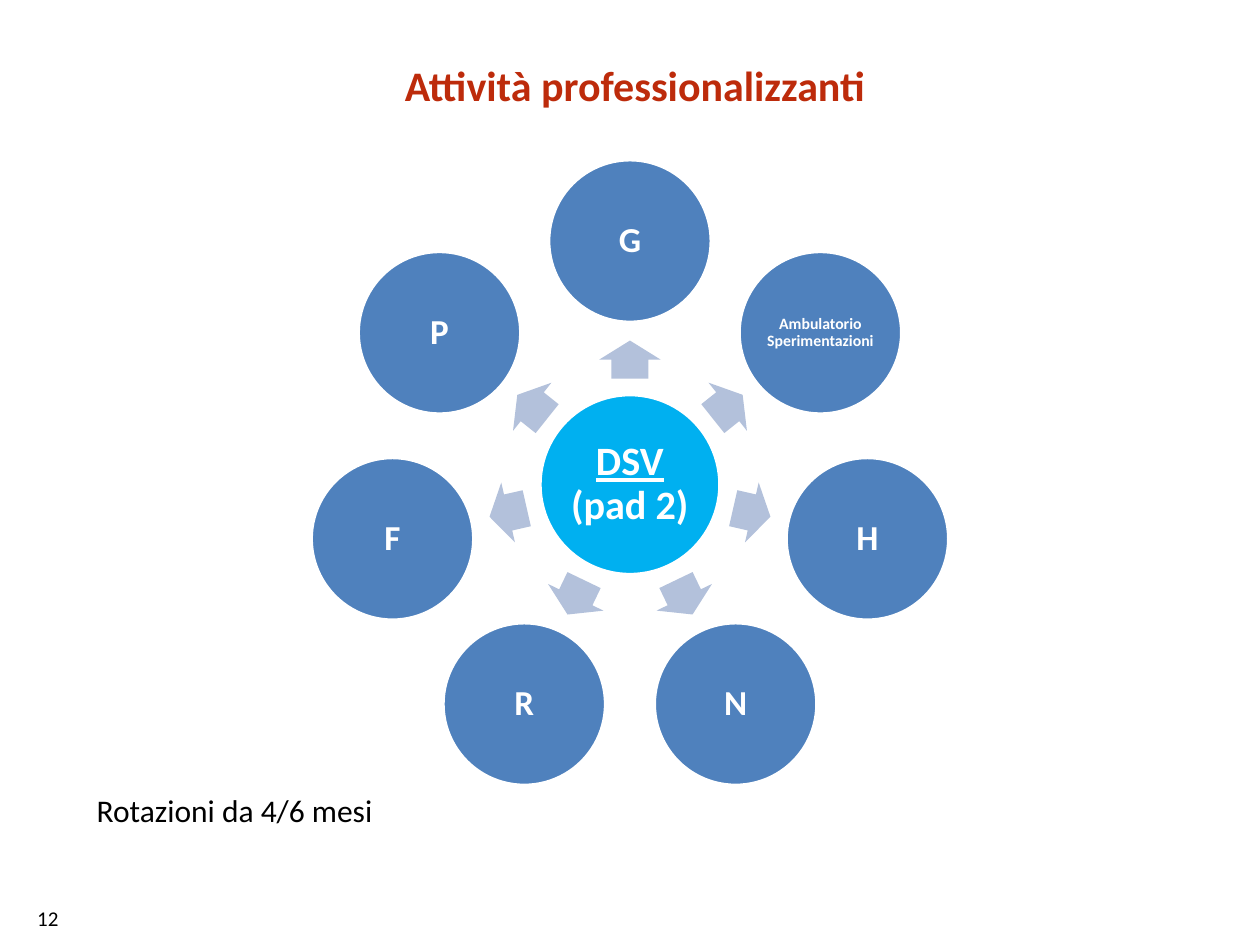
"""Build the slide on professional activities: seven placements around one hub."""
import math

from pptx import Presentation
from pptx.dml.color import RGBColor
from pptx.enum import shapes, text
from pptx.util import Cm, Pt

FONT = "Calibri"
RED = RGBColor(0xBD, 0x2B, 0x0B)
BLACK = RGBColor(0, 0, 0)
WHITE = RGBColor(0xFF, 0xFF, 0xFF)
CYAN = RGBColor(0x00, 0xB0, 0xF0)
BLUE = RGBColor(0x4F, 0x81, 0xBD)
PALE_BLUE = RGBColor(0xB3, 0xC1, 0xDB)

HUB_X, HUB_Y = 12.7, 9.77
HUB_SIZE, PLACEMENT_SIZE = 3.63, 3.28
ARROW_LENGTH, ARROW_HEIGHT = 0.77, 1.24
PLACEMENT_RADIUS, ARROW_RADIUS = 4.91, 2.52
PLACEMENTS = [("G", 20), ("Ambulatorio Sperimentazioni", 9), ("H", 20),
              ("N", 20), ("R", 20), ("F", 20), ("P", 20)]


def set_font(paragraph, size, color, bold=False):
    """Set the font shared by all runs of a paragraph."""
    font = paragraph.font
    font.name, font.size, font.bold = FONT, Pt(size), bold
    font.color.rgb = color


def add_label(slide, left, top, width, height, wording, size, color=BLACK, bold=False):
    """Add a wrapping text box and return its paragraph."""
    frame = slide.shapes.add_textbox(Cm(left), Cm(top), Cm(width), Cm(height)).text_frame
    frame.word_wrap = True
    label = frame.paragraphs[0]
    label.text = wording
    set_font(label, size, color, bold)
    return label


def add_centred(slide, preset, x, y, width, height, fill):
    """Add a filled, shadowless shape centred on a point."""
    figure = slide.shapes.add_shape(
        preset, Cm(x - width / 2), Cm(y - height / 2), Cm(width), Cm(height))
    figure.shadow.inherit = False
    figure.fill.solid()
    figure.fill.fore_color.rgb = fill
    return figure


def add_circle(slide, x, y, diameter, fill, wording, size, inset=0.08):
    """Add a white-rimmed circle with centred bold text and return its paragraph."""
    circle = add_centred(slide, shapes.MSO_SHAPE.OVAL, x, y, diameter, diameter, fill)
    circle.line.color.rgb = WHITE
    circle.line.width = Pt(2)
    frame = circle.text_frame
    frame.word_wrap = True
    frame.vertical_anchor = text.MSO_ANCHOR.MIDDLE
    frame.margin_left = frame.margin_right = Cm(inset)
    frame.margin_top = frame.margin_bottom = Cm(inset)
    caption = frame.paragraphs[0]
    caption.text = wording
    caption.alignment = text.PP_ALIGN.CENTER
    caption.line_spacing = 0.9
    set_font(caption, size, WHITE, bold=True)
    return caption


def add_arrow(slide, x, y, angle):
    """Add an outward arrow turned clockwise by an angle in degrees."""
    arrow = add_centred(slide, shapes.MSO_SHAPE.RIGHT_ARROW, x, y,
                        ARROW_LENGTH, ARROW_HEIGHT, PALE_BLUE)
    arrow.line.fill.background()
    arrow.adjustments[0], arrow.adjustments[1] = 0.6, 0.5
    arrow.rotation = angle % 360


def around_hub(radius, angle):
    """Return the point at a radius and angle from the hub."""
    turn = math.radians(angle)
    return HUB_X + radius * math.cos(turn), HUB_Y + radius * math.sin(turn)


def add_rotation_wheel(slide):
    """Add the hub with its arrows and placements, clockwise from the top."""
    hub = add_circle(slide, HUB_X, HUB_Y, HUB_SIZE, CYAN, "DSV", 23)
    hub.runs[0].font.underline = True
    hub.add_run().text = " (pad 2)"
    for index, (placement, size) in enumerate(PLACEMENTS):
        angle = -90 + index * 360 / len(PLACEMENTS)
        add_arrow(slide, *around_hub(ARROW_RADIUS, angle), angle)
        add_circle(slide, *around_hub(PLACEMENT_RADIUS, angle), PLACEMENT_SIZE, BLUE,
                   placement, size, inset=0.08 if size == 20 else 0.03)


def main():
    """Build and save the slide."""
    deck = Presentation()
    deck.slide_width, deck.slide_height = Cm(25.4), Cm(19.05)
    slide = deck.slides.add_slide(deck.slide_layouts[6])
    add_label(slide, 0.5, 18.13, 2.2, 0.77, "12", 12)
    title = add_label(slide, 1.1, 1.32, 23.4, 1.8, "Attività professionalizzanti", 24, RED, True)
    title.alignment = text.PP_ALIGN.CENTER
    title.line_spacing = Pt(22)
    add_rotation_wheel(slide)
    add_label(slide, 1.7, 15.83, 6.2, 1.03, "Rotazioni da 4/6 mesi", 18)
    deck.save("out.pptx")


if __name__ == "__main__":
    main()
